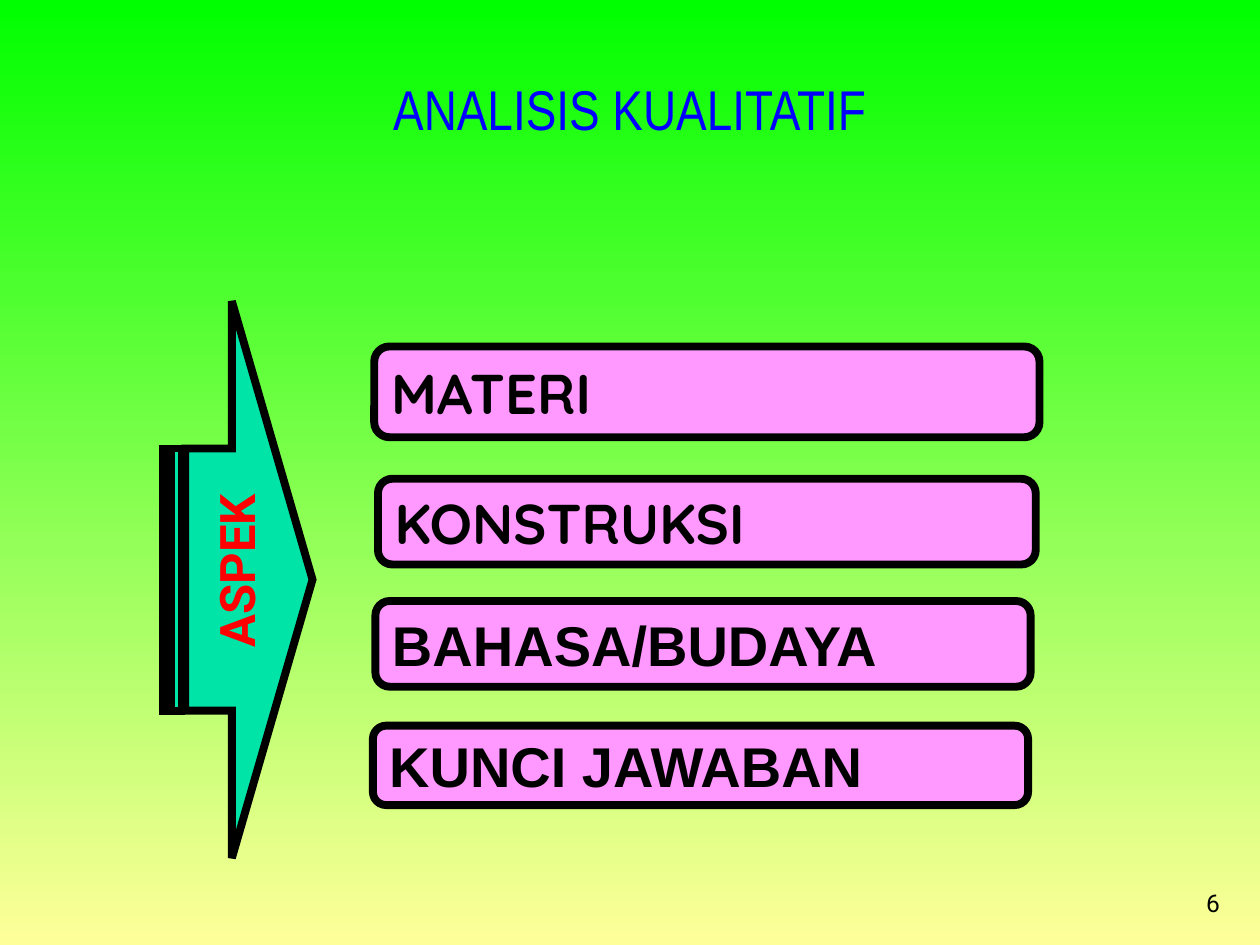
"""Build the qualitative analysis slide on a grid of 100 columns by 75 rows."""
from dataclasses import dataclass
from typing import Optional

import pptx
import pptx.dml.color
import pptx.enum.shapes
import pptx.enum.text
import pptx.oxml.ns
import pptx.util
from lxml import etree

COLS, ROWS = 100, 75
CELL = pptx.util.Inches(10) // COLS
COLORS = {
    "top": "00FF00", "bottom": "FFFF99", "title": "0000FF", "arrow": "00E4A8",
    "label": "FF0000", "box": "FF99FF", "ink": "000000",
}
ALIGN = pptx.enum.text.PP_ALIGN
ANCHOR = pptx.enum.text.MSO_ANCHOR


@dataclass
class Label:
    """Text with its frame in grid columns and rows."""
    text: str
    col: float
    row: float
    width: float
    height: float
    font: str
    size: int = 32
    color: str = "ink"
    bold: bool = True
    align: ALIGN = ALIGN.LEFT
    anchor: ANCHOR = ANCHOR.MIDDLE
    wrap: bool = False

    def frame(self) -> list[int]:
        """Return left, top, width and height in EMU."""
        return [grid(n) for n in (self.col, self.row, self.width, self.height)]


TITLE = Label("ANALISIS KUALITATIF", 9.7, 5.2, 80.6, 6.7, "Arial Narrow",
              color="title", bold=False, align=ALIGN.CENTER)
ASPECT = Label("ASPEK", 13.1, 43.4, 11.2, 3.8, "Roboto", size=28,
               color="label", align=ALIGN.CENTER)
NUMBER = Label("6", 77, 68.3, 20.8, 5, "Roboto", size=14, bold=False,
               align=ALIGN.RIGHT, anchor=ANCHOR.BOTTOM, wrap=True)
BOXES = [
    Label("MATERI", 29.7, 27.5, 52.8, 7.2, "Quicksand"),
    Label("KONSTRUKSI", 30, 38, 52.2, 6.8, "Quicksand"),
    Label("BAHASA/BUDAYA", 29.8, 47.7, 52, 6.8, "Arial"),
    Label("KUNCI JAWABAN", 29.6, 57.6, 52, 6.3, "Arial"),
]


def grid(n: float) -> int:
    """Convert grid cells to EMU."""
    return round(n * CELL)


def rgb(name: str) -> pptx.dml.color.RGBColor:
    """Look up a colour by name."""
    return pptx.dml.color.RGBColor.from_string(COLORS[name])


def write(sp, label: Label) -> None:
    """Put the label's text into a shape."""
    tf = sp.text_frame
    tf.word_wrap = label.wrap
    tf.vertical_anchor = label.anchor
    p = tf.paragraphs[0]
    p.alignment = label.align
    r = p.add_run()
    r.text = label.text
    r.font.name = label.font
    r.font.size = pptx.util.Pt(label.size)
    r.font.bold = label.bold
    r.font.color.rgb = rgb(label.color)


def paint(sp, fill: Optional[str]) -> None:
    """Fill and outline a shape, or leave it clear."""
    sp.shadow.inherit = False
    if fill is None:
        sp.fill.background()
        sp.line.fill.background()
        return
    sp.fill.solid()
    sp.fill.fore_color.rgb = rgb(fill)
    sp.line.color.rgb = rgb("ink")
    sp.line.width = pptx.util.Pt(4.5)


def add_box(s, label: Label, fill: Optional[str] = "box"):
    """Add a rounded rectangle with text."""
    kind = pptx.enum.shapes.MSO_SHAPE.ROUNDED_RECTANGLE
    sp = s.shapes.add_shape(kind, *label.frame())
    paint(sp, fill)
    write(sp, label)
    return sp


def add_arrow(s) -> None:
    """Add the striped arrow pointing at the boxes."""
    top, upper, middle, lower, bottom = 23.9, 35.6, 46, 56.4, 68.1
    tail, neck, tip = 14.7, 18.4, 24.8
    head = [(neck, top), (neck, upper), (tail, upper), (tail, lower),
            (neck, lower), (neck, bottom), (tip, middle)]
    stripes = [[(a, upper), (a, lower), (b, lower), (b, upper)]
               for a, b in ((13.6, 14.4), (12.9, 13.2))]
    outlines = [[(grid(x), grid(y)) for x, y in pts] for pts in (head, *stripes)]
    fb = s.shapes.build_freeform(*outlines[0][0])
    for i, (start, *rest) in enumerate(outlines):
        if i:
            fb.move_to(*start)
        fb.add_line_segments(rest, close=True)
    sp = fb.convert_to_shape()
    paint(sp, "arrow")
    ln = sp.line.fill._xPr
    etree.SubElement(ln, pptx.oxml.ns.qn("a:miter"), lim="800000")


def main() -> None:
    """Build and save the slide."""
    prs = pptx.Presentation()
    prs.slide_width, prs.slide_height = COLS * CELL, ROWS * CELL
    s = prs.slides.add_slide(prs.slide_layouts[5])
    fill = s.background.fill
    fill.gradient()
    fill.gradient_angle = 270
    for stop, name, position in zip(fill.gradient_stops, ("top", "bottom"), (0, 1)):
        stop.color.rgb = rgb(name)
        stop.position = position

    title = s.shapes.title
    title.left, title.top, title.width, title.height = TITLE.frame()
    write(title, TITLE)
    add_arrow(s)
    add_box(s, ASPECT, fill=None).rotation = 270
    for box in BOXES:
        add_box(s, box)
    write(s.shapes.add_textbox(*NUMBER.frame()), NUMBER)
    prs.save("out.pptx")


if __name__ == "__main__":
    main()
